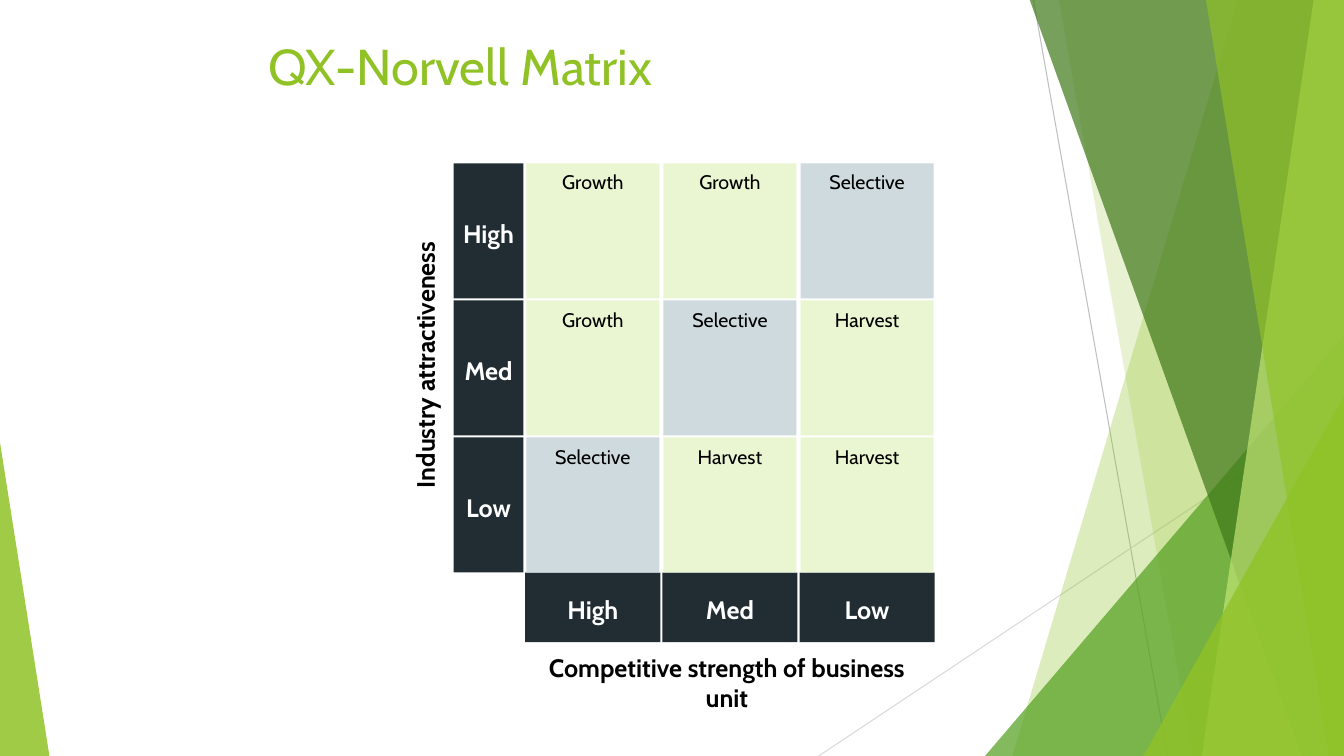
from dataclasses import dataclass

from lxml import etree
from pptx import Presentation
from pptx import util as u
from pptx.dml.color import RGBColor
from pptx.enum import shapes, text
from pptx.oxml.ns import qn

PX = 9144  # EMU per px, 100 px to the inch


@dataclass(frozen=True)
class Theme:
    font: str = "Cabin"
    green: str = "90C226"
    leaf: str = "54A021"
    forest: str = "3F7819"
    lime: str = "C0E474"
    ray: str = "BFBFBF"
    pale_ray: str = "D9D9D9"
    pale_green: str = "EAF6D1"
    grey_blue: str = "CFDADF"
    slate: str = "212D32"
    black: str = "000000"
    white: str = "FFFFFF"
    title_size: int = 36
    label_size: int = 18
    cell_size: int = 14


class SlideBuilder:
    def __init__(self, slide, theme):
        self.slide, self.theme = slide, theme

    def paint(self, shape, color, opacity=100):
        shape.shadow.inherit = False
        shape.line.fill.background()
        shape.fill.solid()
        shape.fill.fore_color.rgb = RGBColor.from_string(color)
        if opacity < 100:
            srgb = shape._element.spPr.find(".//" + qn("a:srgbClr"))
            etree.SubElement(srgb, qn("a:alpha"), val=str(opacity * 1000))
        return shape

    def ray(self, start, end, color):
        ends = [v * PX for v in (*start, *end)]
        line = self.slide.shapes.add_connector(shapes.MSO_CONNECTOR.STRAIGHT, *ends)
        line.line.color.rgb = RGBColor.from_string(color)
        line.line.width = u.Pt(0.75)
        etree.SubElement(line._element.spPr, qn("a:effectLst"))

    def facet(self, points, color, opacity):
        start, *rest = [(x * PX, y * PX) for x, y in points]
        outline = self.slide.shapes.build_freeform(*start, scale=1.0)
        outline.add_line_segments(rest, close=True)
        self.paint(outline.convert_to_shape(), color, opacity)

    def triangle(self, box, apex, color, opacity):
        corner = self.slide.shapes.add_shape(
            shapes.MSO_SHAPE.ISOSCELES_TRIANGLE, *(v * PX for v in box))
        corner.adjustments[0] = apex
        self.paint(corner, color, opacity)

    def set_text(self, shape, words, size, color, bold=False, align=text.PP_ALIGN.CENTER,
                 anchor=text.MSO_ANCHOR.TOP):
        frame = shape.text_frame
        frame.word_wrap = True
        frame.vertical_anchor = anchor
        paragraph = frame.paragraphs[0]
        paragraph.text = words
        paragraph.alignment = align
        paragraph.font.name = self.theme.font
        paragraph.font.size = u.Pt(size)
        paragraph.font.bold = bold
        paragraph.font.color.rgb = RGBColor.from_string(color)
        return frame

    def tile(self, box, color):
        rect = self.slide.shapes.add_shape(
            shapes.MSO_SHAPE.RECTANGLE, *(v * PX for v in box))
        return self.paint(rect, color)

    def header(self, box, words):
        frame = self.set_text(self.tile(box, self.theme.slate), words,
                              self.theme.label_size, self.theme.white, True,
                              anchor=text.MSO_ANCHOR.MIDDLE)
        frame.margin_left = frame.margin_right = 0
        frame.margin_top = 10 * PX

    def cell(self, box, words, color):
        frame = self.set_text(self.tile(box, color), words, self.theme.cell_size,
                              self.theme.black)
        frame.margin_top = 7 * PX

    def label(self, box, words, size, color, rotation=0, **style):
        caption = self.slide.shapes.add_textbox(*(v * PX for v in box))
        caption.rotation = rotation
        return self.set_text(caption, words, size, color, **style)


def main():
    theme = Theme()
    deck = Presentation()
    deck.slide_width, deck.slide_height = 1333 * PX, 750 * PX
    page = SlideBuilder(deck.slides.add_slide(deck.slide_layouts[6]), theme)

    # Faceted backdrop
    right, top, bottom = 1333, -1, 750
    page.ray((1025, 0), (1158, bottom), theme.ray)
    page.ray((right, 403), (812, bottom), theme.pale_ray)

    def band(top_x, bottom_x, color, opacity):
        page.facet([(top_x, top), (right, top), (right, bottom), (bottom_x, bottom)],
                   color, opacity)

    band(1228, 1004, theme.green, 30)
    band(1050, 1183, theme.green, 20)
    page.triangle((977, 333, 356, 417), 1, theme.leaf, 72)
    band(1021, 1291, theme.forest, 70)
    band(1303, 1192, theme.lime, 70)
    band(1196, 1318, theme.green, 65)
    page.triangle((1134, 393, 199, 357), 1, theme.green, 80)
    page.triangle((0, 439, 49, 311), 0, theme.green, 85)

    # Title
    title = page.label((217, 30, 900, 125), "QX-Norvell Matrix", theme.title_size,
                       theme.green, align=text.PP_ALIGN.LEFT)
    title.margin_left = 49 * PX

    # Matrix with its level headers
    levels = ["High", "Med", "Low"]
    strategies = [["Growth", "Growth", "Selective"],
                  ["Growth", "Selective", "Harvest"],
                  ["Selective", "Harvest", "Harvest"]]
    left, upper, step = 522, 162, 136
    cell_width, cell_height, header_depth = 132, 134, 69
    for i, level in enumerate(levels):
        page.header((450, upper + i * step, header_depth, cell_height), level)
        page.header((left - 1 + i * step, 568, cell_width + 2, header_depth), level)
    for row, names in enumerate(strategies):
        for column, strategy in enumerate(names):
            color = theme.grey_blue if strategy == "Selective" else theme.pale_green
            page.cell((left + column * step, upper + row * step, cell_width, cell_height),
                      strategy, color)

    # Axis captions
    page.label((268, 342, 307, 40), "Industry attractiveness", theme.label_size,
               theme.black, rotation=270, bold=True)
    page.label((523, 642, 396, 40), "Competitive strength of business unit",
               theme.label_size, theme.black, bold=True)

    deck.save("out.pptx")


if __name__ == "__main__":
    main()
